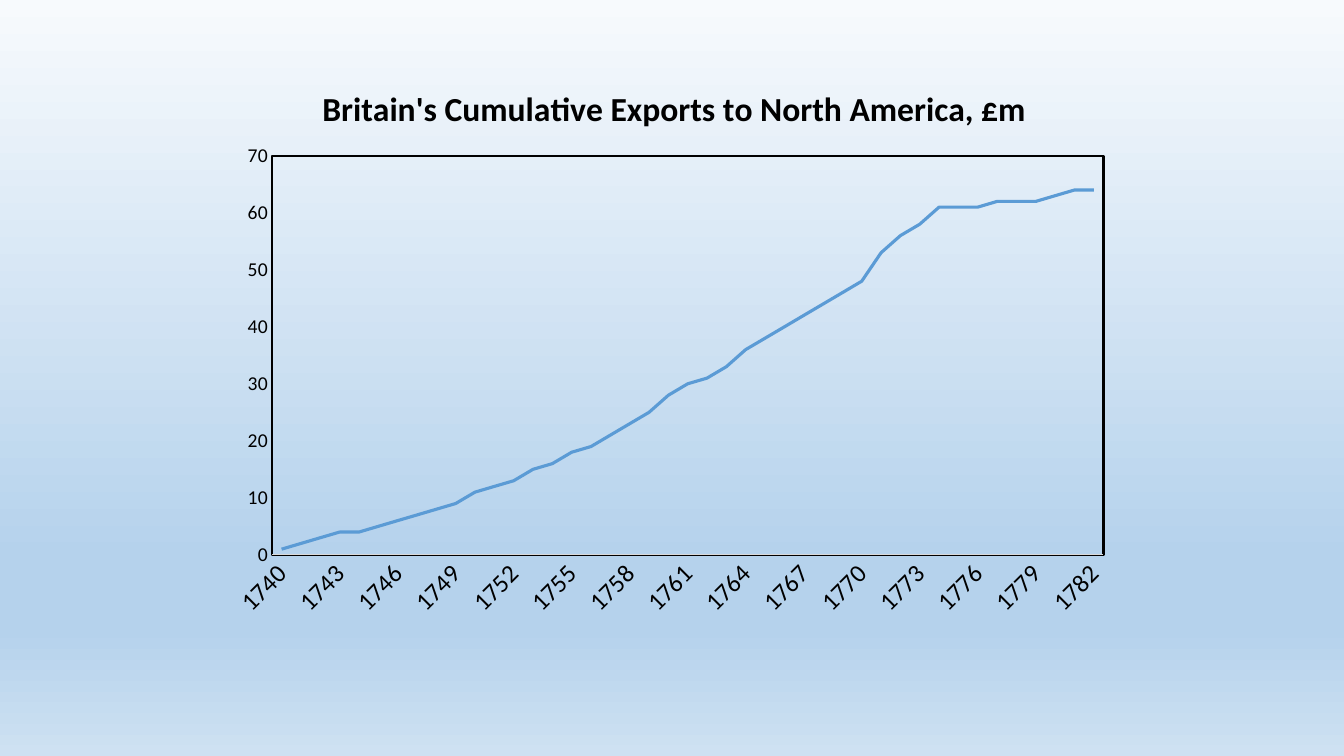
from lxml import etree
from pptx import Presentation
from pptx import util as u
from pptx.chart import data as cd
from pptx.dml import color as dc
from pptx.enum import chart as ec
from pptx.oxml import ns, parse_xml

HUES = {"ink": "000000", "line": "5B9BD5", "axis": "D9D9D9",
        "top": "F7FAFD", "mid": "B5D2EC", "low": "CEE1F2"}
FADE = [(0, "top"), (74, "mid"), (83, "mid"), (100, "low")]
START = 1740
TOTALS = [1, 2, 3, 4, 4, 5, 6, 7, 8, 9, 11, 12, 13, 15, 16, 18, 19, 21, 23, 25,
          28, 30, 31, 33, 36, 38, 40, 42, 44, 46, 48, 53, 56, 58, 61, 61, 61,
          62, 62, 62, 63, 64, 64]


def place(tag, **spots):
    inner = "".join(f'<c:{key} val="{val}"/>' for key, val in spots.items())
    target = '<c:layoutTarget val="inner"/>' if tag == "plot" else ""
    return parse_xml(
        f'<c:layout {ns.nsdecls("c")}><c:manualLayout>{target}'
        '<c:xMode val="edge"/><c:yMode val="edge"/>'
        f'{inner}</c:manualLayout></c:layout>')


class Deck:
    face = "Calibri"

    def __init__(self):
        self.show = Presentation()
        self.show.slide_width = u.Cm(33.87)
        self.show.slide_height = u.Cm(19.05)
        self.slide = self.show.slides.add_slide(self.show.slide_layouts[6])

    def hue(self, name):
        return dc.RGBColor.from_string(HUES[name])

    def font(self, font, size, bold=False):
        font.name = self.face
        font.size = u.Pt(size)
        font.bold = bold
        font.color.rgb = self.hue("ink")

    def stroke(self, line, name, width):
        line.color.rgb = self.hue(name)
        line.width = u.Pt(width)

    def back(self, stops):
        fill = self.slide.background.fill
        fill.gradient()
        fill.gradient_angle = 270
        ramp = self.slide.element.find(".//" + ns.qn("a:gsLst"))
        for stop in list(ramp):
            ramp.remove(stop)
        for spot, name in stops:
            stop = etree.SubElement(ramp, ns.qn("a:gs"), pos=str(spot * 1000))
            etree.SubElement(stop, ns.qn("a:srgbClr"), val=HUES[name])

    def graph(self, left, top, width, height, start, totals):
        data = cd.CategoryChartData()
        data.categories = [str(start + i) for i in range(len(totals))]
        data.add_series("Series 1", totals)
        box = [u.Cm(n) for n in (left, top, width, height)]
        chart = self.slide.shapes.add_chart(
            ec.XL_CHART_TYPE.LINE, *box, data).chart
        self.font(chart.font, 14)
        chart.has_legend = False
        plot = chart.plots[0]
        plot.vary_by_categories = False
        line = plot.series[0]
        line.smooth = False
        self.stroke(line.format.line, "line", 2.25)
        return chart

    def title(self, chart, words, size, x, y):
        chart.has_title = True
        title = chart.chart_title
        run = title.text_frame.paragraphs[0].add_run()
        run.text = words
        self.font(run.font, size, True)
        title.include_in_layout = False
        node = chart.element.find(".//" + ns.qn("c:title"))
        for old in node.findall(ns.qn("c:layout")):
            node.remove(old)
        node.find(ns.qn("c:tx")).addnext(place("title", x=x, y=y))

    def axes(self, chart, top, step, skip):
        years, sums = chart.category_axis, chart.value_axis
        for axis, size in ((years, 18), (sums, 14)):
            axis.has_major_gridlines = False
            axis.major_tick_mark = ec.XL_TICK_MARK.NONE
            axis.minor_tick_mark = ec.XL_TICK_MARK.NONE
            self.font(axis.tick_labels.font, size)
        self.stroke(years.format.line, "axis", 0.75)
        sums.format.line.fill.background()
        sums.minimum_scale, sums.maximum_scale = 0, top
        sums.major_unit = step
        node = chart.element.find(".//" + ns.qn("c:catAx"))
        node.find(".//" + ns.qn("a:bodyPr")).set("rot", "-2700000")
        gap = etree.Element(ns.qn("c:tickLblSkip"), val=str(skip))
        node.find(ns.qn("c:noMultiLvlLbl")).addprevious(gap)

    def frame(self, chart, x, y, w, h):
        area = chart.element.find(".//" + ns.qn("c:plotArea"))
        for old in area.findall(ns.qn("c:layout")):
            area.remove(old)
        area.insert(0, place("plot", x=x, y=y, w=w, h=h))
        area.append(parse_xml(
            f'<c:spPr {ns.nsdecls("c", "a")}><a:noFill/>'
            f'<a:ln w="{u.Pt(1.5)}"><a:solidFill>'
            f'<a:srgbClr val="{HUES["ink"]}"/></a:solidFill></a:ln></c:spPr>'))


def main():
    deck = Deck()
    deck.back(FADE)
    chart = deck.graph(5.46, 1.37, 22.83, 14.45, START, TOTALS)
    deck.title(chart, "Britain's Cumulative Exports to North America, £m",
               24, 0.11, 0.045)
    deck.axes(chart, 70, 10, 3)
    deck.frame(chart, 0.061, 0.177, 0.918, 0.696)
    deck.show.save("out.pptx")


if __name__ == "__main__":
    main()
